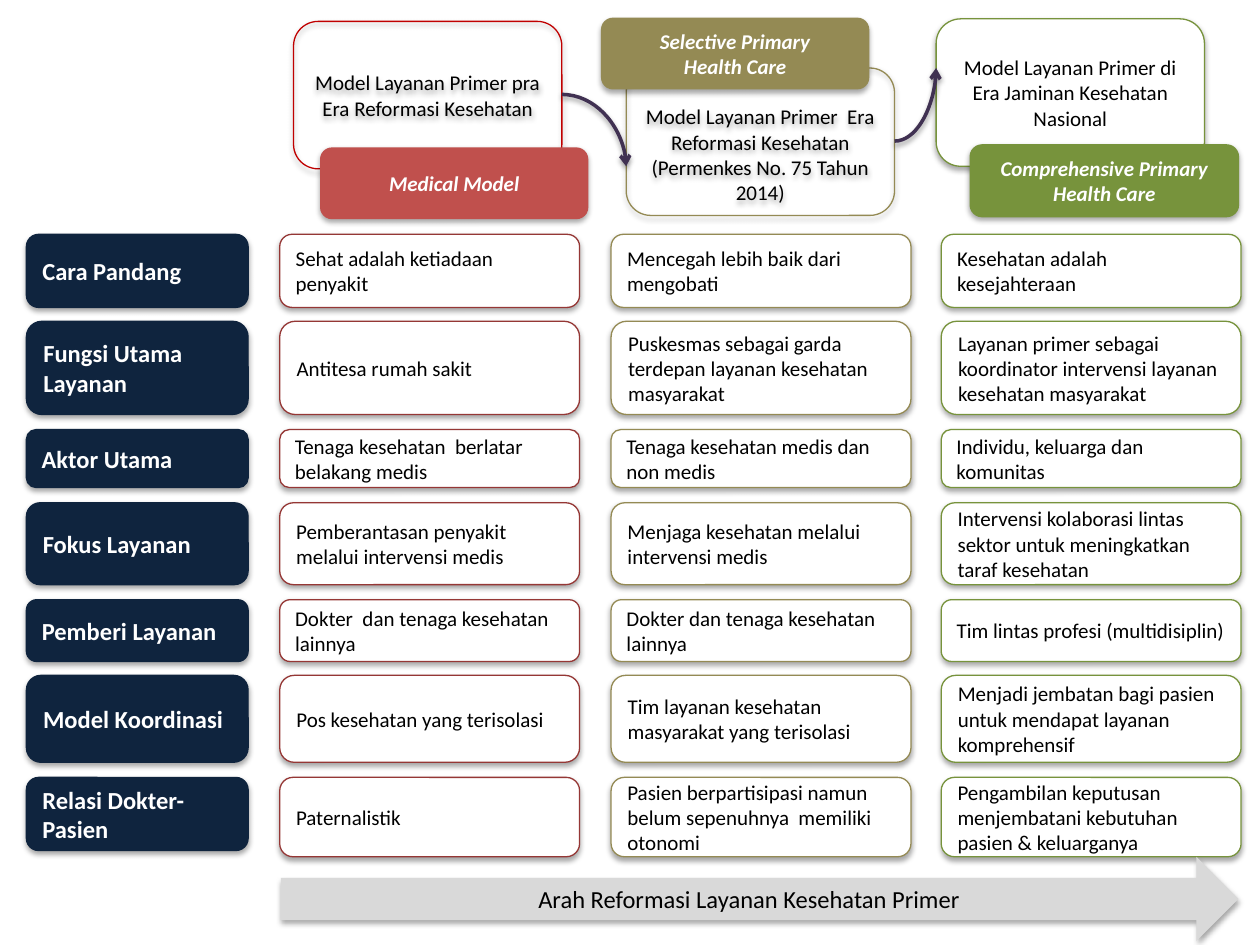
from lxml import etree
from pptx import Presentation
from pptx.dml.color import RGBColor
from pptx.enum.shapes import MSO_CONNECTOR, MSO_SHAPE
from pptx.enum.text import MSO_ANCHOR, PP_ALIGN
from pptx.oxml import parse_xml
from pptx.oxml.ns import nsdecls, qn
from pptx.util import Inches, Pt

ROUNDED = MSO_SHAPE.ROUNDED_RECTANGLE
ARROW = MSO_SHAPE.RIGHT_ARROW
CURVE = MSO_CONNECTOR.CURVE
MIDDLE = MSO_ANCHOR.MIDDLE
LEFT, CENTER = PP_ALIGN.LEFT, PP_ALIGN.CENTER

BLACK = RGBColor(0x00, 0x00, 0x00)
WHITE = RGBColor(0xFF, 0xFF, 0xFF)
NAVY = RGBColor(0x0F, 0x24, 0x3E)
BRIGHT_RED = RGBColor(0xC0, 0x00, 0x00)
RED = RGBColor(0xC0, 0x50, 0x4D)
DARK_RED = RGBColor(0x95, 0x37, 0x35)
OLIVE = RGBColor(0x94, 0x8A, 0x54)
GREEN = RGBColor(0x77, 0x93, 0x3C)
PURPLE = RGBColor(0x40, 0x31, 0x52)
GRAY = RGBColor(0xD9, 0xD9, 0xD9)

PLAIN = {"name": "Calibri", "size": Pt(12)}
BADGE = {**PLAIN, "bold": True, "italic": True}
LABEL = {**PLAIN, "size": Pt(14), "bold": True}
CAPTION = {**PLAIN, "size": Pt(14)}

deck = Presentation()
deck.slide_width, deck.slide_height = Inches(10), Inches(7.5)
page = deck.slides.add_slide(deck.slide_layouts[6])


def add_shadow(shape, opacity):
    """Give a shape or connector a soft shadow straight below it."""
    properties = shape._element.spPr
    for old in properties.findall(qn("a:effectLst")):
        properties.remove(old)
    properties.append(parse_xml(
        f'<a:effectLst {nsdecls("a")}><a:outerShdw blurRad="40000" dist="23000" '
        f'dir="5400000" rotWithShape="0"><a:srgbClr val="000000">'
        f'<a:alpha val="{opacity * 1000}"/></a:srgbClr></a:outerShdw></a:effectLst>'))


def add_box(place, lines, fill, line, text_color, style, align=LEFT, preset=ROUNDED):
    """Add a shadowed shape with one paragraph for each line of text."""
    box = page.shapes.add_shape(preset, *(Inches(length) for length in place))
    if fill is None:
        box.fill.background()
    else:
        box.fill.solid()
        box.fill.fore_color.rgb = fill
    if line is None:
        box.line.fill.background()
    else:
        box.line.color.rgb = line
        box.line.width = Pt(0.75)
    add_shadow(box, 35)
    frame = box.text_frame
    frame.word_wrap = True
    frame.vertical_anchor = MIDDLE
    for index, text in enumerate(lines):
        para = frame.paragraphs[0] if index == 0 else frame.add_paragraph()
        para.alignment = align
        span = para.add_run()
        span.text = text
        span.font.color.rgb = text_color
        for name, value in style.items():
            setattr(span.font, name, value)
    return box


# Three service models, each with a badge
add_box((2.33, 0.17, 2.13, 1.17), ["Model Layanan Primer pra Era Reformasi Kesehatan"],
        None, BRIGHT_RED, BLACK, PLAIN, CENTER)
add_box((2.54, 1.17, 2.13, 0.57), ["Medical Model"], RED, None, WHITE, BADGE, CENTER)
reform_model = add_box(
    (4.97, 0.54, 2.13, 1.17),
    ["Model Layanan Primer  Era Reformasi Kesehatan", "(Permenkes No. 75 Tahun 2014)"],
    None, OLIVE, BLACK, PLAIN, CENTER)
reform_model.text_frame.margin_top = Inches(0.25)  # clears the badge above
add_box((4.77, 0.14, 2.13, 0.57), ["Selective Primary", "Health Care"],
        OLIVE, None, WHITE, BADGE, CENTER)
add_box((7.43, 0.15, 2.13, 1.17), ["Model Layanan Primer di Era Jaminan Kesehatan Nasional"],
        WHITE, GREEN, BLACK, PLAIN, CENTER)
add_box((7.7, 1.15, 2.13, 0.57), ["Comprehensive Primary Health Care"],
        GREEN, GREEN, WHITE, BADGE, CENTER)

# Comparison grid: top, label height, cell height, label, one cell per model
columns = [(2.22, DARK_RED), (4.85, OLIVE), (7.47, GREEN)]
rows = [
    (1.86, 0.58, 0.58, "Cara Pandang",
     "Sehat adalah ketiadaan penyakit",
     "Mencegah lebih baik dari mengobati",
     "Kesehatan adalah kesejahteraan"),
    (2.55, 0.74, 0.74, "Fungsi Utama Layanan",
     "Antitesa rumah sakit",
     "Puskesmas sebagai garda terdepan layanan kesehatan masyarakat",
     "Layanan primer sebagai koordinator intervensi layanan kesehatan masyarakat"),
    (3.41, 0.46, 0.46, "Aktor Utama",
     "Tenaga kesehatan  berlatar belakang medis",
     "Tenaga kesehatan medis dan non medis",
     "Individu, keluarga dan komunitas"),
    (3.99, 0.65, 0.65, "Fokus Layanan",
     "Pemberantasan penyakit melalui intervensi medis",
     "Menjaga kesehatan melalui intervensi medis",
     "Intervensi kolaborasi lintas sektor untuk meningkatkan taraf kesehatan"),
    (4.76, 0.49, 0.49, "Pemberi Layanan",
     "Dokter  dan tenaga kesehatan lainnya",
     "Dokter dan tenaga kesehatan lainnya",
     "Tim lintas profesi (multidisiplin)"),
    (5.36, 0.69, 0.69, "Model Koordinasi",
     "Pos kesehatan yang terisolasi",
     "Tim layanan kesehatan masyarakat yang terisolasi",
     "Menjadi jembatan bagi pasien untuk mendapat layanan komprehensif"),
    (6.17, 0.58, 0.63, "Relasi Dokter-Pasien",
     "Paternalistik",
     "Pasien berpartisipasi namun belum sepenuhnya  memiliki otonomi",
     "Pengambilan keputusan menjembatani kebutuhan pasien & keluarganya"),
]
for top, label_height, cell_height, label, *cells in rows:
    add_box((0.21, top, 1.76, label_height), [label], NAVY, NAVY, WHITE, LABEL)
    for (left, color), text in zip(columns, cells):
        add_box((left, top, 2.38, cell_height), [text], WHITE, color, BLACK, PLAIN)

# Curved arrows from model to model
for ends in [(7.1, 1.12, 7.43, 0.54), (4.46, 0.75, 4.97, 1.32)]:
    curve = page.shapes.add_connector(CURVE, *(Inches(length) for length in ends))
    curve.line.color.rgb = PURPLE
    curve.line.width = Pt(2)
    curve._element.spPr.find(qn("a:prstGeom")).set("prst", "curvedConnector2")
    etree.SubElement(curve.line._get_or_add_ln(), qn("a:tailEnd"), type="arrow")
    add_shadow(curve, 38)

# Direction of the reform
add_box((2.23, 6.8, 7.6, 0.67), ["Arah Reformasi Layanan Kesehatan Primer"],
        GRAY, None, BLACK, CAPTION, CENTER, ARROW)

deck.save("out.pptx")
